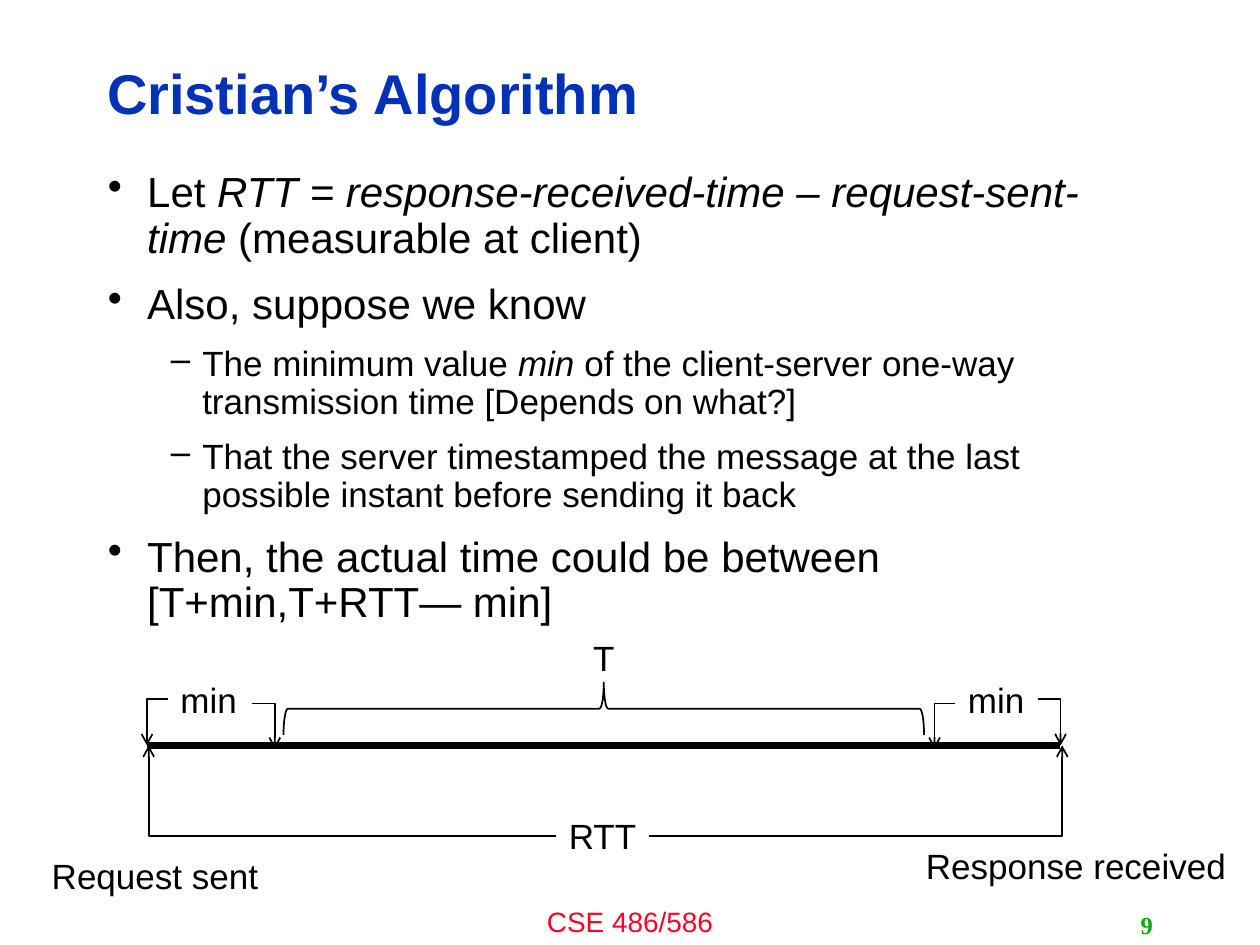
from lxml.etree import SubElement
from pptx import Presentation
from pptx.dml.color import RGBColor
from pptx.enum.shapes import MSO_CONNECTOR, MSO_SHAPE
from pptx.enum.text import MSO_ANCHOR, PP_ALIGN
from pptx.oxml.ns import qn
from pptx.util import Pt

THEME = {
    "font": "Arial", "number_font": "Times New Roman",
    "text": "000000", "title": "0332B7", "footer": "FC0128",
    "number": "00AE00", "background": "FFFFFF",
    "title_size": 32, "level_sizes": (24, 20), "label_size": 20,
    "footer_size": 16, "number_size": 14,
    "thin": 1, "thick": 4.5,
}

TITLE = "Cristian’s Algorithm"
# Each bullet: level, then (text, italic) runs
BULLETS = [
    (0, [("Let ", False),
         ("RTT = response-received-time – request-sent-time ", True),
         ("(measurable at client)", False)]),
    (0, [("Also, suppose we know", False)]),
    (1, [("The minimum value ", False), ("min ", True),
         ("of the client-server one-way transmission time [Depends on what?]", False)]),
    (1, [("That the server timestamped the message at the last possible "
          "instant before sending it back", False)]),
    (0, [("Then, the actual time could be between [T+min,T+RTT— min]", False)]),
]
# Bullet character, text indent and hanging indent of each level
LEVELS = [("•", 22.5, 22.5), ("–", 54, 18)]

# Timeline: request sent at START, response received at END
START, END, AXIS = 84, 606, 426
LABELS = [
    ("Request sent", (22.5, 484.5, 133, 32)),
    ("Response received", (522, 479, 187, 32)),
    ("RTT", (318, 462, 53, 32)),
    ("min", (96, 384, 47, 32)),
    ("min", (546, 384, 47, 32)),
]
T_LABEL = ("T", (318, 360, 54, 32))
# Each arrow leaves its label sideways, then turns to the axis
ARROWS = [
    ((96, 399.5), (START, AXIS)),
    ((144, 402), (157, 428)),
    ((546, 402), (534, 428)),
    ((593, 399.5), (END, AXIS)),
    ((318, 478), (START + 1, AXIS)),
    ((371, 478), (END + 1, AXIS)),
]


def color(name):
    return RGBColor.from_string(THEME[name])


def add_text(paragraph, text, *, size, color_name="text", font="font",
             bold=False, italic=False, align=PP_ALIGN.LEFT):
    paragraph.alignment = align
    run = paragraph.add_run()
    run.text = text
    run.font.name = THEME[font]
    run.font.size = Pt(size)
    run.font.bold = bold
    run.font.italic = italic
    run.font.color.rgb = color(color_name)


def add_box(slide, box, wrap=False, anchor=MSO_ANCHOR.TOP):
    frame = slide.shapes.add_textbox(*map(Pt, box)).text_frame
    frame.word_wrap = wrap
    frame.vertical_anchor = anchor
    return frame


def add_title(slide):
    title = slide.shapes.title
    title.left, title.top, title.width, title.height = map(Pt, (54, 26, 574.5, 58))
    title.text_frame.vertical_anchor = MSO_ANCHOR.MIDDLE
    paragraph = title.text_frame.paragraphs[0]
    paragraph.line_spacing = 0.9
    add_text(paragraph, TITLE, size=THEME["title_size"], color_name="title", bold=True)


def add_bullets(slide):
    frame = add_box(slide, (54.5, 94.5, 605, 388), wrap=True)
    for index, (level, runs) in enumerate(BULLETS):
        paragraph = frame.add_paragraph() if index else frame.paragraphs[0]
        size = THEME["level_sizes"][level]
        paragraph.level = level
        paragraph.line_spacing = 0.9
        paragraph.space_before = Pt(size / 2)
        for text, italic in runs:
            add_text(paragraph, text, size=size, italic=italic)
        character, indent, hanging = LEVELS[level]
        properties = paragraph._p.get_or_add_pPr()
        properties.set("marL", str(Pt(indent)))
        properties.set("indent", str(-Pt(hanging)))
        SubElement(properties, qn("a:buChar"), char=character)


def add_line(slide, start, end, width, elbow_arrow=False):
    kind = MSO_CONNECTOR.ELBOW if elbow_arrow else MSO_CONNECTOR.STRAIGHT
    connector = slide.shapes.add_connector(kind, *map(Pt, (*start, *end)))
    connector.line.color.rgb = color("text")
    connector.line.width = Pt(width)
    properties = connector._element.spPr
    if elbow_arrow:
        properties.find(qn("a:prstGeom")).set("prst", "bentConnector2")
        SubElement(connector.line._get_or_add_ln(), qn("a:tailEnd"), type="arrow")
    SubElement(properties, qn("a:effectLst"))


def add_brace(slide):
    """Add a left brace turned to open downwards over the middle of the axis."""
    brace = slide.shapes.add_shape(MSO_SHAPE.LEFT_BRACE, *map(Pt, (330, 222, 30, 366)))
    brace.rotation = 90
    brace.shadow.inherit = False
    brace.fill.solid()
    brace.fill.fore_color.rgb = color("background")
    brace.line.color.rgb = color("text")
    brace.line.width = Pt(THEME["thin"])


def add_timeline(slide):
    add_line(slide, (START, AXIS), (END, AXIS), THEME["thick"])
    for text, box in LABELS:
        add_text(add_box(slide, box).paragraphs[0], text, size=THEME["label_size"])
    text, box = T_LABEL
    add_text(add_box(slide, box, wrap=True).paragraphs[0], text,
             size=THEME["label_size"], align=PP_ALIGN.CENTER)
    for start, end in ARROWS:
        add_line(slide, start, end, THEME["thin"], elbow_arrow=True)
    add_brace(slide)


def add_footer(slide):
    footer = add_box(slide, (240, 513.5, 240, 26.5), wrap=True)
    add_text(footer.paragraphs[0], "CSE 486/586", size=THEME["footer_size"],
             color_name="footer", align=PP_ALIGN.CENTER)
    number = add_box(slide, (516, 517, 150, 23), anchor=MSO_ANCHOR.MIDDLE)
    add_text(number.paragraphs[0], "9", size=THEME["number_size"], color_name="number",
             font="number_font", bold=True, align=PP_ALIGN.RIGHT)


def main():
    presentation = Presentation()
    presentation.slide_width, presentation.slide_height = Pt(720), Pt(540)
    slide = presentation.slides.add_slide(presentation.slide_layouts[5])
    add_title(slide)
    add_bullets(slide)
    add_timeline(slide)
    add_footer(slide)
    presentation.save("out.pptx")


if __name__ == "__main__":
    main()
